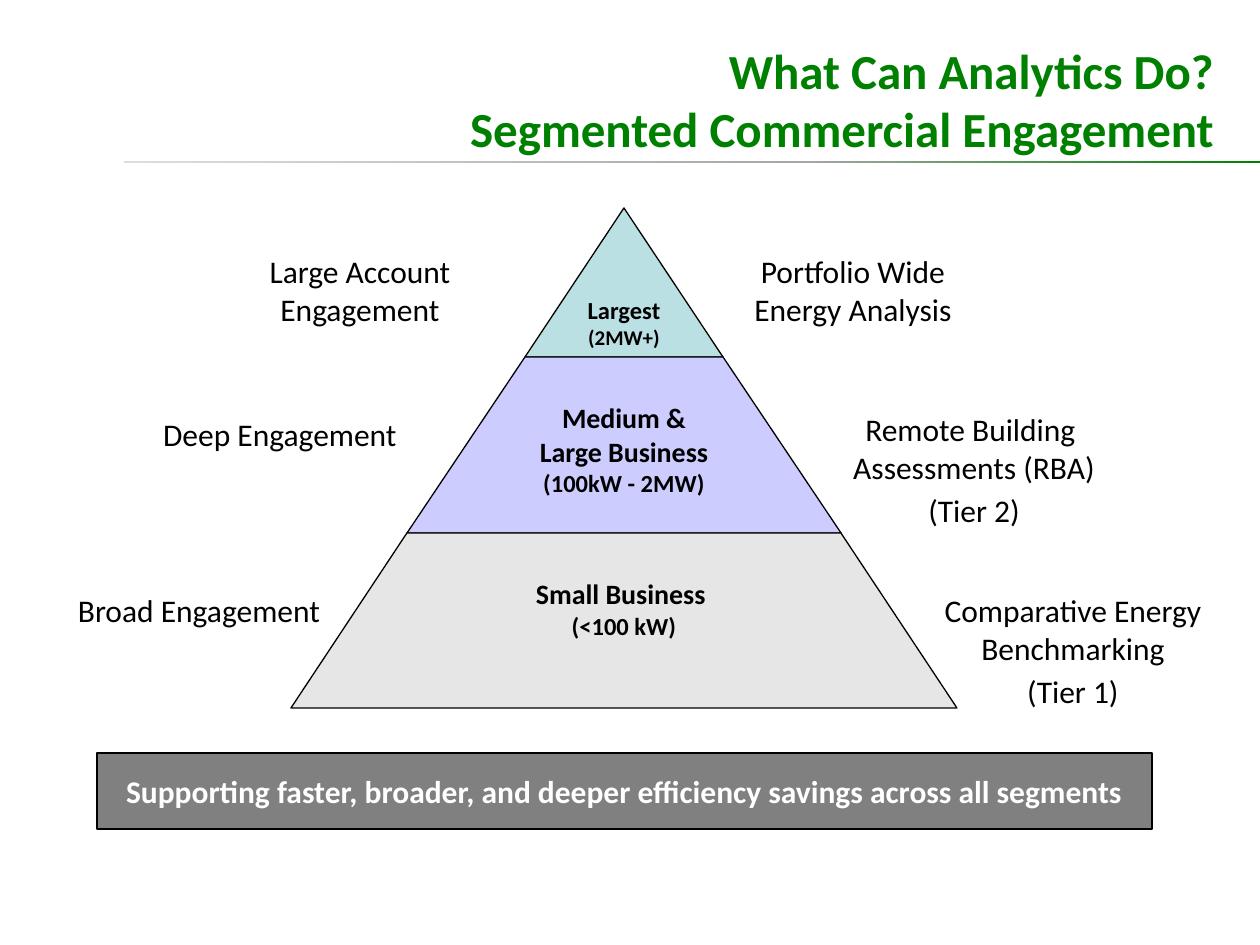
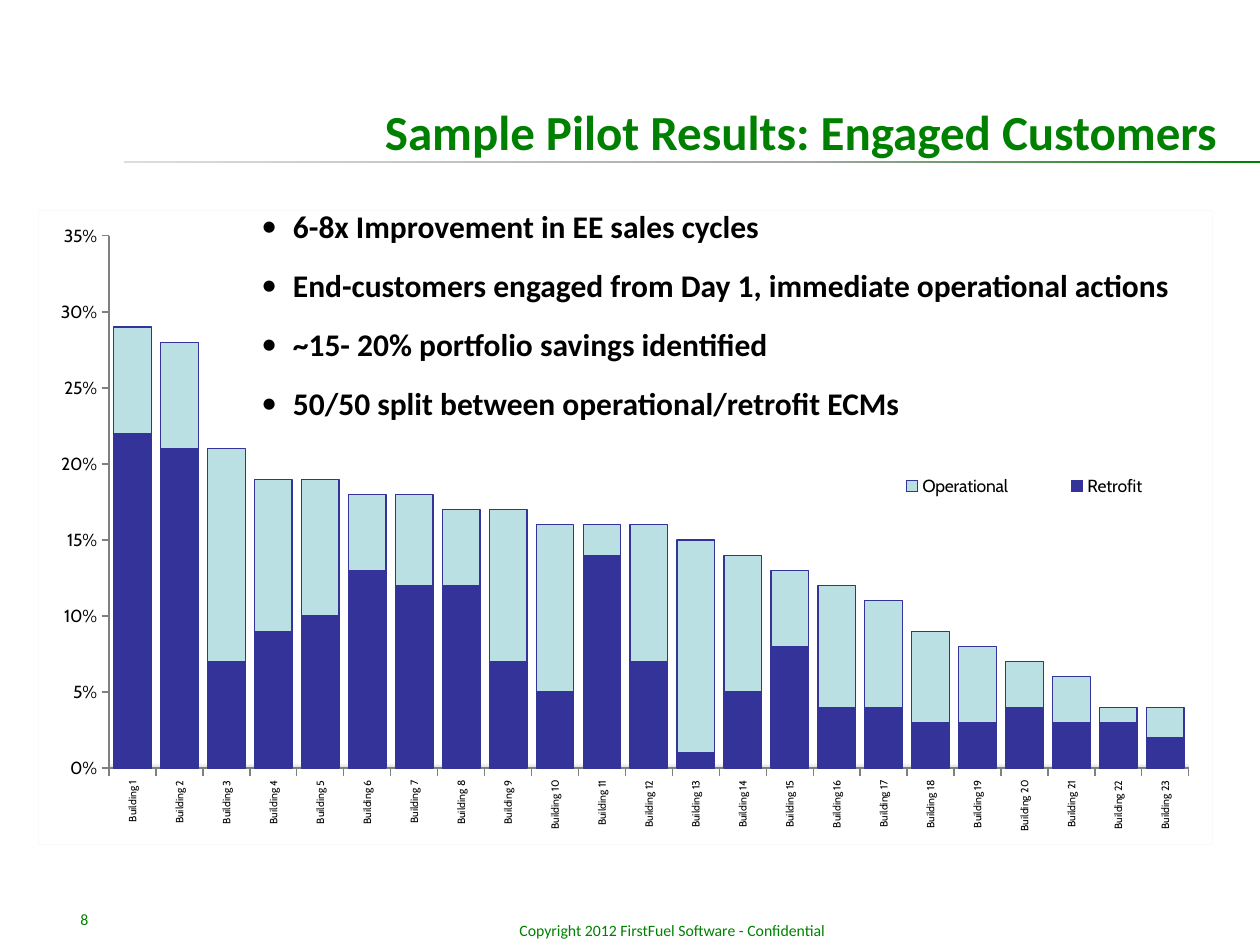
"""Build two slides on commercial energy engagement."""
from dataclasses import dataclass

from lxml.etree import fromstring
from pptx import Presentation
from pptx.chart.data import CategoryChartData
from pptx.dml.color import RGBColor
from pptx.enum.chart import XL_CHART_TYPE, XL_LEGEND_POSITION, XL_TICK_MARK
from pptx.enum.shapes import MSO_SHAPE
from pptx.enum.text import MSO_ANCHOR, PP_ALIGN
from pptx.oxml.ns import nsdecls, qn
from pptx.util import Emu, Pt

UNIT = 914400 / 126


@dataclass(frozen=True)
class Theme:
    """Hold colours, fonts and type sizes."""
    green: str = "008000"
    black: str = "000000"
    white: str = "FFFFFF"
    gray: str = "808080"
    pale: str = "E6E6E6"
    teal: str = "BBE0E3"
    lilac: str = "CCCCFF"
    navy: str = "333399"
    frame: str = "F9F9F9"
    fade: tuple = ((0, "DDDDDD"), (60, "A6A6A6"), (100, "008000"))
    floor: tuple = ((0, "D9D9D9"), (1, "FFFFFF"))
    font: str = "Calibri"
    plot: str = "Cabin"
    head: int = 28
    body: int = 18
    big: int = 16
    mid: int = 14
    small: int = 12
    axis: int = 10
    foot: int = 9
    tick: int = 6
    hair: float = 0.75


LOOK = Theme()
LEFT, MID, RIGHT = PP_ALIGN.LEFT, PP_ALIGN.CENTER, PP_ALIGN.RIGHT

RETRO = (22, 21, 7, 9, 10, 13, 12, 12, 7, 5, 14, 7,
         1, 5, 8, 4, 4, 3, 3, 4, 3, 3, 2)
OPER = (7, 7, 14, 10, 9, 5, 6, 5, 10, 11, 2, 9,
        14, 9, 5, 8, 7, 6, 5, 3, 3, 1, 2)


def px(num):
    """Turn pixels into EMU."""
    return Emu(round(num * UNIT))


def rgb(code):
    """Turn a hex code into a colour."""
    return RGBColor.from_string(code)


def style(item, **vals):
    """Set each format value on an item."""
    for key, val in vals.items():
        setattr(item, key, val)


def ink(font, size, code=LOOK.black, bold=False, face=LOOK.font):
    """Set the look of a font."""
    style(font, size=Pt(size), bold=bold, name=face)
    font.color.rgb = rgb(code)


def paint(look, code, line=LOOK.black):
    """Give a shape or series a plain fill and outline."""
    look.fill.solid()
    look.fill.fore_color.rgb = rgb(code)
    look.line.color.rgb = rgb(line)
    look.line.width = Pt(LOOK.hair)


def blend(stops, angle):
    """Return a gradient fill as XML."""
    marks = "".join(f'<a:gs pos="{spot * 1000}"><a:srgbClr val="{code}"/></a:gs>'
                    for spot, code in stops)
    return (f'<a:gradFill {nsdecls("a")}><a:gsLst>{marks}</a:gsLst>'
            f'<a:lin ang="{angle * 60000}" scaled="0"/></a:gradFill>')


def write(frame, rows, align=MID, gap=0, **look):
    """Fill a frame with (text, size) rows and return the paragraphs."""
    paras = []
    for num, (text, size) in enumerate(rows):
        para = frame.add_paragraph() if num else frame.paragraphs[0]
        style(para, alignment=align, space_before=Pt(gap if num else 0))
        run = para.add_run()
        run.text = text
        ink(run.font, size, **look)
        paras.append(para)
    return paras


def add_text(slide, box, rows, anchor=MSO_ANCHOR.TOP, wrap=True, **look):
    """Add a text box and return its paragraphs."""
    frame = slide.shapes.add_textbox(*map(px, box)).text_frame
    style(frame, word_wrap=wrap, vertical_anchor=anchor)
    return write(frame, rows, **look)


def add_page(deck, title, box, anchor):
    """Add a slide with its title and fading rule."""
    slide = deck.slides.add_slide(deck.slide_layouts[6])
    rule = slide.shapes.add_shape(MSO_SHAPE.RECTANGLE, *map(px, (124, 161, 1136, 2)))
    rule.shadow.inherit = False
    rule.line.fill.background()
    rule._element.spPr.insert(2, fromstring(blend(LOOK.fade, 0)))
    add_text(slide, box, [(line, LOOK.head) for line in title], anchor,
             align=RIGHT, code=LOOK.green, bold=True)
    return slide


def add_tier(slide, top, base, code, rows, anchor, inset):
    """Add one slice of the pyramid."""
    peak, mid, slope, room = 208, 624, 2 / 3, 178
    high, low = ((edge - peak) * slope for edge in (top, base))
    pen = slide.shapes.build_freeform(mid - high, top, scale=UNIT)
    pen.add_line_segments([(mid + high, top), (mid + low, base), (mid - low, base)])
    tier = pen.convert_to_shape()
    tier.shadow.inherit = False
    paint(tier, code)
    side = px(low - room / 2)
    style(tier.text_frame, word_wrap=True, vertical_anchor=anchor,
          margin_left=side, margin_right=side, margin_top=px(inset),
          margin_bottom=px(7))
    write(tier.text_frame, rows, bold=True)


def add_label(slide, mid, top, lines, note=None):
    """Add a centred label with an optional note below."""
    wide = 290
    rows = [(line, LOOK.body) for line in lines + ([note] if note else [])]
    paras = add_text(slide, (mid - wide / 2, top, wide, 12 + 38 * len(rows)),
                     rows, wrap=False)
    if note:
        paras[-1].space_before = Pt(3)


def add_banner(slide, text):
    """Add the closing message bar."""
    bar = slide.shapes.add_shape(MSO_SHAPE.RECTANGLE, *map(px, (97, 753, 1055, 76)))
    bar.shadow.inherit = False
    paint(bar, LOOK.gray)
    style(bar.text_frame, word_wrap=True, vertical_anchor=MSO_ANCHOR.MIDDLE)
    write(bar.text_frame, [(text, LOOK.body)], code=LOOK.white, bold=True)


def add_points(slide, box, lines):
    """Add a list with hanging bullets."""
    paras = add_text(slide, box, [(line, LOOK.body) for line in lines],
                     align=LEFT, gap=12, bold=True)
    for para in paras:
        props = para._p.get_or_add_pPr()
        props.set("marL", "228600")
        props.set("indent", "-228600")
        props.append(fromstring(f'<a:buFont {nsdecls("a")} typeface="{LOOK.font}"/>'))
        props.append(fromstring(f'<a:buChar {nsdecls("a")} char="•"/>'))


def place(part, index, **spots):
    """Fix the layout of a chart part by shares of the chart."""
    for old in part.findall(qn("c:layout")):
        part.remove(old)
    body = "".join(f'<c:{key} val="{val}"/>' for key, val in spots.items())
    part.insert(index, fromstring(
        f'<c:layout {nsdecls("c")}><c:manualLayout>{body}</c:manualLayout></c:layout>'))


def frame_chart(chart):
    """Fill the chart and plot areas."""
    space = chart._chartSpace
    back = fromstring(
        f'<c:spPr {nsdecls("c", "a")}><a:solidFill><a:srgbClr val="{LOOK.white}"/>'
        f'</a:solidFill><a:ln w="{Pt(LOOK.hair)}"><a:solidFill>'
        f'<a:srgbClr val="{LOOK.frame}"/></a:solidFill></a:ln></c:spPr>')
    space.find(qn("c:txPr")).addprevious(back)
    area = space.chart.plotArea
    area.append(fromstring(
        f'<c:spPr {nsdecls("c")}>{blend(LOOK.floor, 270)}</c:spPr>'))
    place(area, 0, layoutTarget="inner", xMode="edge", yMode="edge",
          x=0.06, y=0.04, w=0.92, h=0.84)


def add_chart(slide, box):
    """Add the stacked savings chart."""
    data = CategoryChartData(number_format="0%")
    data.categories = [f"Building {num}" for num in range(1, len(RETRO) + 1)]
    for name, vals in (("Retrofit", RETRO), ("Operational", OPER)):
        data.add_series(name, [val / 100 for val in vals])
    chart = slide.shapes.add_chart(
        XL_CHART_TYPE.COLUMN_STACKED, *map(px, box), data).chart
    style(chart, has_title=False, has_legend=True)
    ink(chart.font, LOOK.axis, face=LOOK.plot)
    style(chart.plots[0], gap_width=25, overlap=100, vary_by_categories=False)
    for bars, code in zip(chart.plots[0].series, (LOOK.navy, LOOK.teal)):
        paint(bars.format, code, LOOK.navy)
    cats, vals = chart.category_axis, chart.value_axis
    for axis, size in ((cats, LOOK.tick), (vals, LOOK.axis)):
        style(axis, has_major_gridlines=False, major_tick_mark=XL_TICK_MARK.OUTSIDE,
              minor_tick_mark=XL_TICK_MARK.NONE)
        axis.format.line.color.rgb = rgb(LOOK.gray)
        ink(axis.tick_labels.font, size, face=LOOK.plot)
    style(vals, minimum_scale=0, maximum_scale=0.35, major_unit=0.05)
    style(vals.tick_labels, number_format="0%", number_format_is_linked=False)
    cats._element.find(qn("c:txPr")).find(qn("a:bodyPr")).set("rot", "-5400000")
    style(chart.legend, position=XL_LEGEND_POSITION.RIGHT, include_in_layout=True)
    ink(chart.legend.font, LOOK.axis, face=LOOK.plot)
    place(chart.legend._element, 1, xMode="edge", yMode="edge",
          x=0.69, y=0.41, w=0.3, h=0.05)
    frame_chart(chart)


def add_foot(slide, page):
    """Add the page number and copyright line."""
    for box, text, align in (
            ((472, 915, 400, 22), "Copyright 2012 FirstFuel Software - Confidential", MID),
            ((68, 904, 294, 23), str(page), LEFT)):
        add_text(slide, box, [(text, LOOK.foot)], align=align, code=LOOK.green)


def main():
    """Build and save the deck."""
    deck = Presentation()
    style(deck, slide_width=px(1260), slide_height=px(945))

    slide = add_page(deck, ["What Can Analytics Do?", "Segmented Commercial Engagement"],
                     (92, 3, 1134, 161), MSO_ANCHOR.BOTTOM)
    add_tier(slide, 208, 357, LOOK.teal,
             [("Largest", LOOK.mid), ("(2MW+)", LOOK.small)], MSO_ANCHOR.BOTTOM, 6)
    add_tier(slide, 357, 533, LOOK.lilac,
             [("Medium & Large Business", LOOK.big), ("(100kW - 2MW)", LOOK.mid)],
             MSO_ANCHOR.TOP, 44)
    add_tier(slide, 533, 708, LOOK.pale,
             [("Small Business ", LOOK.big), ("(<100 kW)", LOOK.mid)],
             MSO_ANCHOR.TOP, 44)
    for label in ((853, 246, ["Portfolio Wide", "Energy Analysis"]),
                  (1073, 585, ["Comparative Energy", "Benchmarking"], "(Tier 1)"),
                  (974, 404, ["Remote Building ", "Assessments (RBA)"], "(Tier 2)"),
                  (360, 246, ["Large Account", "Engagement"]),
                  (199, 585, ["Broad Engagement"]),
                  (280, 409, ["Deep Engagement"])):
        add_label(slide, *label)
    add_banner(slide, "Supporting faster, broader, and deeper efficiency savings "
                      "across all segments")

    slide = add_page(deck, ["Sample Pilot Results: Engaged Customers"],
                     (38, 104, 1191, 53), MSO_ANCHOR.MIDDLE)
    add_chart(slide, (38, 210, 1175, 635))
    add_foot(slide, 8)
    add_points(slide, (249, 201, 965, 256), [
        "6-8x Improvement in EE sales cycles",
        "End-customers engaged from Day 1, immediate operational actions",
        "~15- 20% portfolio savings identified",
        "50/50 split between operational/retrofit ECMs"])
    deck.save("out.pptx")


if __name__ == "__main__":
    main()
